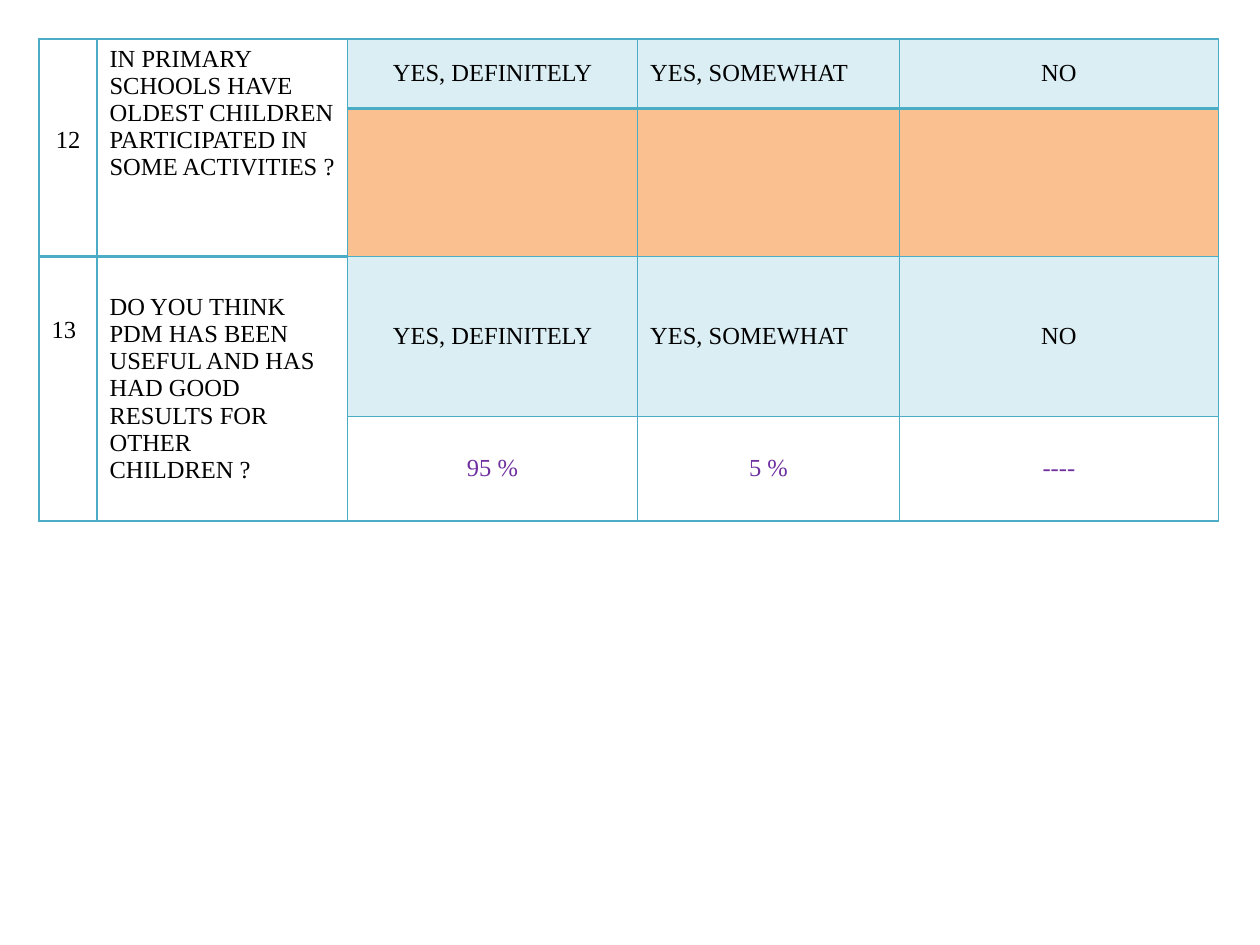
from dataclasses import dataclass

from lxml.etree import SubElement
from pptx import Presentation
from pptx.dml.color import RGBColor as Color
from pptx.enum.text import MSO_ANCHOR as Anchor, PP_ALIGN as Align
from pptx.oxml.ns import qn
from pptx.util import Inches, Pt


@dataclass(frozen=True)
class Theme:
    font: str = "Times New Roman"
    size: float = 14
    text: str = "000000"
    result: str = "7030A0"
    answer_fill: str = "DBEEF4"
    empty_fill: str = "FAC090"
    border: str = "4BACC6"
    thin: float = 1
    thick: float = 2


THEME = Theme()
SLIDE_SIZE = (10, 7.5)
TABLE_BOX = (0.31, 0.31, 9.36, 3.82)
COLUMN_WIDTHS = (0.46, 1.99, 2.3, 2.08, 2.53)
ROW_HEIGHTS = (0.55, 1.17, 1.27, 0.83)
LINE_HEIGHT = 0.215
CELL_MARGIN = 0.05
ANSWERS = ("YES, DEFINITELY", "YES, SOMEWHAT", "NO")
ANSWER_ALIGNS = (Align.CENTER, Align.LEFT, Align.CENTER)

QUESTIONS = (
    {
        "number": "12", "number_align": Align.CENTER, "lines_above": 3,
        "question": "IN PRIMARY SCHOOLS HAVE OLDEST CHILDREN "
                    "PARTICIPATED IN SOME ACTIVITIES ?",
        "anchor": Anchor.TOP, "results": ("", "", ""),
        "result_fill": THEME.empty_fill, "rule": THEME.thick,
    },
    {
        "number": "13", "number_align": Align.LEFT, "lines_above": 2,
        "question": "DO YOU THINK PDM HAS BEEN USEFUL AND HAS HAD GOOD "
                    "RESULTS FOR OTHER CHILDREN ?",
        "anchor": Anchor.MIDDLE, "results": ("95 %", "5 %", "----"),
        "result_fill": None, "rule": THEME.thin,
    },
)


def set_borders(cell, bottom_width):
    properties = cell._tc.get_or_add_tcPr()
    for index, side in enumerate("LRTB"):
        width = bottom_width if side == "B" else THEME.thin
        line = SubElement(properties, qn(f"a:ln{side}"), w=str(Pt(width)))
        fill = SubElement(line, qn("a:solidFill"))
        SubElement(fill, qn("a:srgbClr"), val=THEME.border)
        properties.insert(index, line)


def format_cell(cell, text="", align=Align.LEFT, anchor=Anchor.MIDDLE,
                color=THEME.text, fill=None, rule=THEME.thin, margin_top=CELL_MARGIN):
    cell.vertical_anchor = anchor
    cell.margin_top = Inches(margin_top)
    if fill:
        cell.fill.solid()
        cell.fill.fore_color.rgb = Color.from_string(fill)
    else:
        cell.fill.background()
    set_borders(cell, rule)

    paragraph = cell.text_frame.paragraphs[0]
    paragraph.alignment = align
    if text:
        paragraph.add_run().text = text
    font_format = {"name": THEME.font, "size": Pt(THEME.size)}
    for target in (paragraph, *paragraph.runs):
        for attribute, value in font_format.items():
            setattr(target.font, attribute, value)
        target.font.color.rgb = Color.from_string(color)


def add_question(table, top_row, entry):
    """Fill the two table rows of one question, starting at top_row."""
    bottom_row = top_row + 1
    rule = entry["rule"]
    for column in range(2):
        format_cell(table.cell(bottom_row, column), rule=rule)
        table.cell(top_row, column).merge(table.cell(bottom_row, column))

    format_cell(table.cell(top_row, 0), entry["number"], entry["number_align"],
                Anchor.TOP, rule=rule,
                margin_top=CELL_MARGIN + entry["lines_above"] * LINE_HEIGHT)
    format_cell(table.cell(top_row, 1), entry["question"],
                anchor=entry["anchor"], rule=rule)

    answers = zip(ANSWERS, ANSWER_ALIGNS, entry["results"])
    for column, (answer, align, result) in enumerate(answers, start=2):
        format_cell(table.cell(top_row, column), answer, align,
                    fill=THEME.answer_fill, rule=rule)
        format_cell(table.cell(bottom_row, column), result, Align.CENTER,
                    color=THEME.result, fill=entry["result_fill"])


def add_survey_table(slide, box):
    left, top, width, height = box
    table = slide.shapes.add_table(
        len(ROW_HEIGHTS), len(COLUMN_WIDTHS),
        *(Inches(length) for length in box)).table
    table.first_row = table.horz_banding = False
    for column, share in zip(table.columns, COLUMN_WIDTHS):
        column.width = Inches(width * share / sum(COLUMN_WIDTHS))
    for row, share in zip(table.rows, ROW_HEIGHTS):
        row.height = Inches(height * share / sum(ROW_HEIGHTS))
    for index, entry in enumerate(QUESTIONS):
        add_question(table, 2 * index, entry)


def main():
    presentation = Presentation()
    presentation.slide_width, presentation.slide_height = map(Inches, SLIDE_SIZE)
    slide = presentation.slides.add_slide(presentation.slide_layouts[6])
    add_survey_table(slide, TABLE_BOX)
    presentation.save("out.pptx")


if __name__ == "__main__":
    main()
